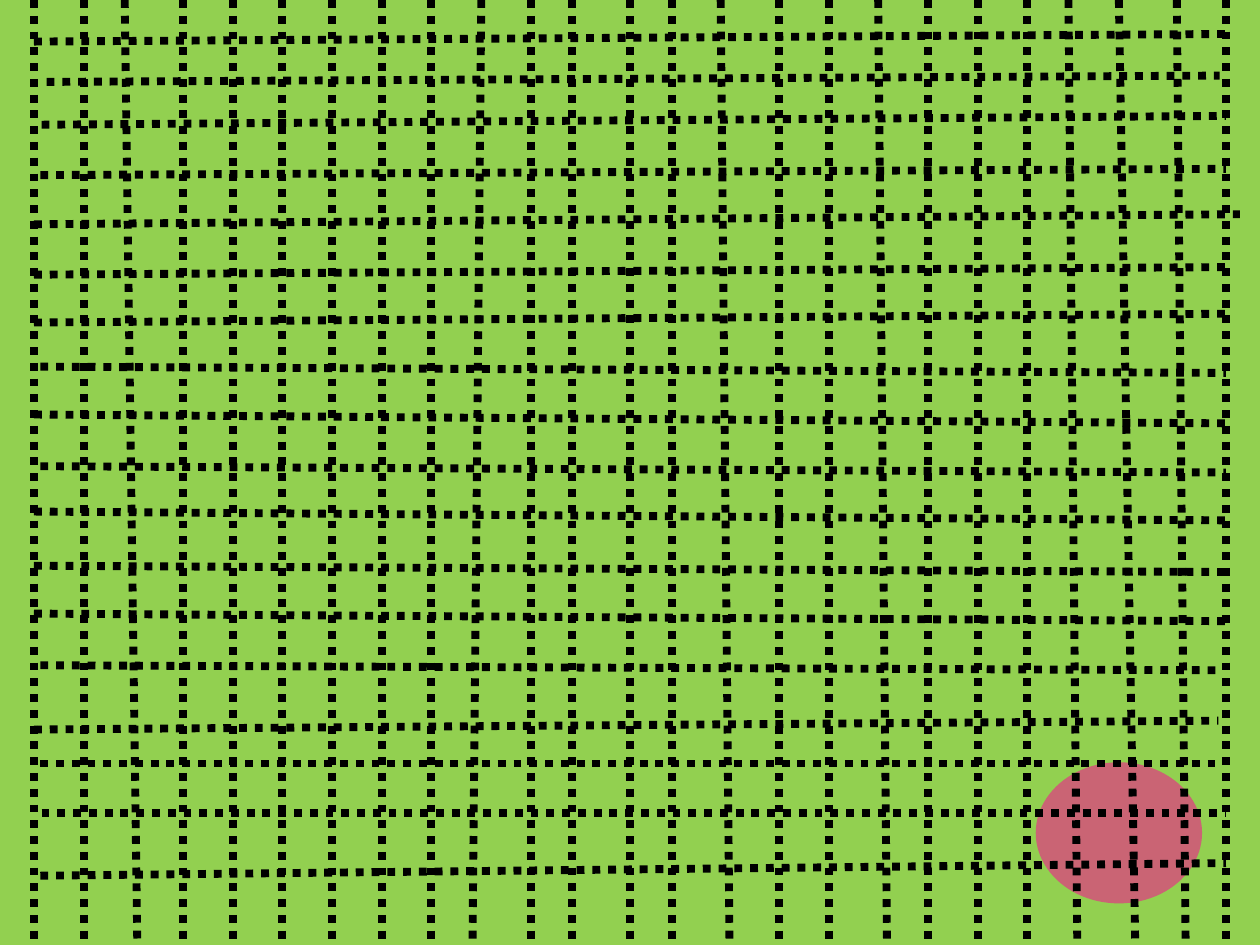
from dataclasses import dataclass

from lxml import etree
from pptx import Presentation
from pptx import util as u
from pptx.dml.color import RGBColor
from pptx.enum import dml, shapes
from pptx.oxml import ns


@dataclass(frozen=True)
class Theme:
    field: str = "92D050"
    grid: str = "000000"
    spot: str = "E03C82"
    spot_opacity: int = 73
    grid_weight: float = 4.5


@dataclass(frozen=True)
class GridLine:
    x1: float
    y1: float
    x2: float
    y2: float


THEME = Theme()
WIDTH, HEIGHT = 10, 7.5
FIRST_COLUMN, LAST_COLUMN, COLUMN_COUNT = 0.27, 9.73, 25
COLUMN_PITCH = (LAST_COLUMN - FIRST_COLUMN) / (COLUMN_COUNT - 1)

UNEVEN_COLUMNS = {
    2: (0.99, 1.09),
    9: (3.82, 3.75),
    11: (4.54, 4.54),
    13: (5.33, 5.33),
    14: (5.72, 5.79),
    17: (6.97, 7.04),
    21: (8.48, 8.55),
    22: (8.88, 9.01),
    23: (9.34, 9.41),
}

ROWS = [
    GridLine(0.27, 0.33, 9.73, 0.27),
    GridLine(0.37, 0.65, 9.68, 0.6),
    GridLine(0.33, 0.99, 9.73, 0.92),
    GridLine(0.32, 1.39, 9.73, 1.34),
    GridLine(0.27, 1.78, 9.84, 1.7),
    GridLine(0.27, 2.18, 9.77, 2.12),
    GridLine(0.27, 2.56, 9.74, 2.49),
    GridLine(0.32, 2.91, 9.73, 2.96),
    GridLine(0.27, 3.29, 9.73, 3.36),
    GridLine(0.32, 3.7, 9.73, 3.75),
    GridLine(0.27, 4.06, 9.74, 4.13),
    GridLine(0.27, 4.49, 9.73, 4.54),
    GridLine(0.27, 4.87, 9.73, 4.93),
    GridLine(0.32, 5.28, 9.68, 5.32),
    GridLine(0.27, 5.79, 9.67, 5.72),
    GridLine(0.32, 6.06, 9.68, 6.06),
    GridLine(0.33, 6.45, 9.73, 6.45),
    GridLine(0.32, 6.95, 9.73, 6.85),
]


def column(index: int) -> GridLine:
    """Return a full-height grid line, evenly spaced unless listed as uneven."""
    even = FIRST_COLUMN + index * COLUMN_PITCH
    top, bottom = UNEVEN_COLUMNS.get(index, (even, even))
    return GridLine(top, 0, bottom, HEIGHT)


def draw_grid_line(slide, place: GridLine) -> None:
    """Draw one dotted line without a shadow."""
    dotted = slide.shapes.add_connector(
        shapes.MSO_CONNECTOR.STRAIGHT,
        u.Inches(place.x1), u.Inches(place.y1),
        u.Inches(place.x2), u.Inches(place.y2),
    )
    dotted.line.color.rgb = RGBColor.from_string(THEME.grid)
    dotted.line.width = u.Pt(THEME.grid_weight)
    dotted.line.dash_style = dml.MSO_LINE.ROUND_DOT
    dotted.line._ln.find(ns.qn("a:prstDash")).set("val", "sysDot")
    etree.SubElement(dotted._element.spPr, ns.qn("a:effectLst"))


def draw_spot(slide, left: float, top: float, width: float, height: float) -> None:
    """Draw the translucent ellipse beneath the grid."""
    spot = slide.shapes.add_shape(
        shapes.MSO_SHAPE.OVAL,
        u.Inches(left), u.Inches(top), u.Inches(width), u.Inches(height),
    )
    spot.shadow.inherit = False
    spot.fill.solid()
    spot.fill.fore_color.rgb = RGBColor.from_string(THEME.spot)
    spot.line.fill.background()
    tint = spot._element.spPr.find(ns.qn("a:solidFill"))[0]
    etree.SubElement(tint, ns.qn("a:alpha"), val=str(THEME.spot_opacity * 1000))


def main() -> None:
    """Build the dotted grid slide."""
    deck = Presentation()
    deck.slide_width, deck.slide_height = u.Inches(WIDTH), u.Inches(HEIGHT)
    slide = deck.slides.add_slide(deck.slide_layouts[6])
    slide.background.fill.solid()
    slide.background.fill.fore_color.rgb = RGBColor.from_string(THEME.field)
    draw_spot(slide, 8.22, 6.05, 1.32, 1.12)
    for place in ROWS + [column(index) for index in range(COLUMN_COUNT)]:
        draw_grid_line(slide, place)
    deck.save("out.pptx")


if __name__ == "__main__":
    main()
